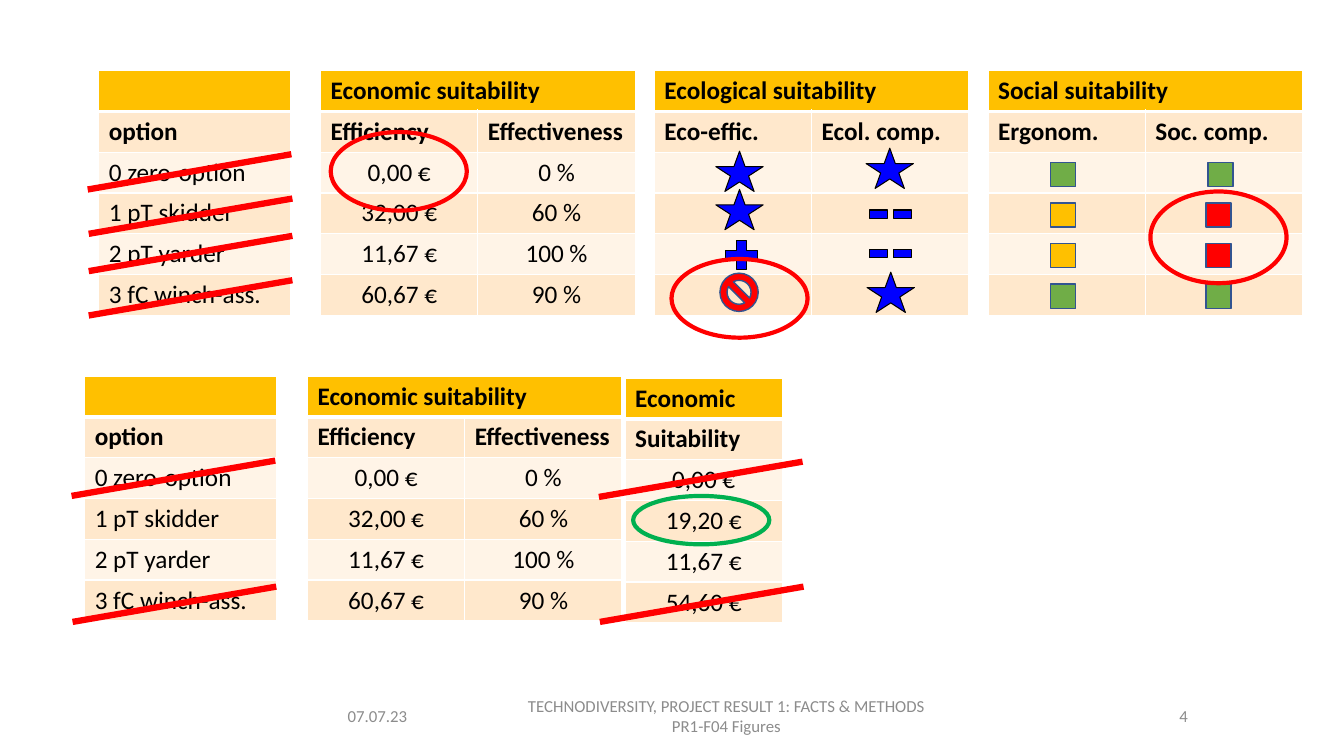
"""Builds the slide that compares harvesting options by economic, ecological and social suitability."""
from typing import Any, NamedTuple

from lxml import etree
from pptx import Presentation
from pptx import util as u
from pptx.dml.color import RGBColor
from pptx.enum import shapes, text
from pptx.oxml.ns import qn

ROW_HEIGHT = 0.405
SUIT_WIDTH = 1.56
AMBER, PEACH, CREAM = "FFC000", "FFE8CC", "FFF4E7"
RED, GREEN, BLUE = "FF0000", "70AD47", "0000FF"
BLACK, WHITE, NAVY, GREY = "000000", "FFFFFF", "325491", "8C8C8C"
Kind = shapes.MSO_SHAPE
Align = text.PP_ALIGN


class Panel(NamedTuple):
    left: float
    top: float
    column_width: float
    heading: str
    labels: list[str]
    body: list[list[str]]
    align: Any = Align.CENTER


class Rating(NamedTuple):
    kind: Any
    left: float
    top: float
    width: float
    height: float
    fill: str | None
    line: str
    weight: float


class Strike(NamedTuple):
    left: float
    bottom: float


def star(left: float, top: float) -> Rating:
    """Describe a top ecological rating."""
    return Rating(Kind.STAR_5_POINT, left, top, 0.47, 0.4, BLUE, BLACK, 0.75)


def minus(left: float, top: float) -> Rating:
    """Describe one dash of a double-minus rating."""
    return Rating(Kind.MATH_MINUS, left, top, 0.24, 0.35, BLUE, BLACK, 0.75)


def square(left: float, row: int, fill: str) -> Rating:
    """Describe a social rating square for an option row."""
    return Rating(Kind.RECTANGLE, left, 1.61 + 0.403 * row, 0.25, 0.24, fill, NAVY, 1)


def ring(left: float, top: float, height: float, line: str = RED) -> Rating:
    """Describe an open ellipse around decisive values."""
    return Rating(Kind.OVAL, left, top, 1.35, height, None, line, 3)


OPTIONS = [["0 zero-option"], ["1 pT skidder"], ["2 pT yarder"], ["3 fC winch-ass."]]
ECONOMY = [["0,00 €", "0 %"], ["32,00 €", "60 %"], ["11,67 €", "100 %"], ["60,67 €", "90 %"]]
COSTS = [["0,00 €"], ["19,20 €"], ["11,67 €"], ["54,60 €"]]
UNRATED = [["", ""]] * 4
ECONOMY_LABELS = ["Efficiency", "Effectiveness"]

PANELS = [
    Panel(0.98, 0.7, 1.9, "", ["option"], OPTIONS, Align.LEFT),
    Panel(3.18, 0.7, SUIT_WIDTH, "Economic suitability", ECONOMY_LABELS, ECONOMY),
    Panel(6.49, 0.7, SUIT_WIDTH, "Ecological suitability", ["Eco-effic.", "Ecol. comp."], UNRATED),
    Panel(9.8, 0.7, SUIT_WIDTH, "Social suitability", ["Ergonom.", "Soc. comp."], UNRATED),
    Panel(0.84, 3.73, 1.9, "", ["option"], OPTIONS, Align.LEFT),
    Panel(3.05, 3.73, SUIT_WIDTH, "Economic suitability", ECONOMY_LABELS, ECONOMY),
    Panel(6.2, 3.75, SUIT_WIDTH, "Economic", ["Suitability"], COSTS),
]
RATINGS = [
    *(square(10.42, row, fill) for row, fill in enumerate([GREEN, AMBER, AMBER, GREEN])),
    square(11.98, 0, GREEN),
    *(square(11.96, row, fill) for row, fill in enumerate([RED, RED, GREEN], 1)),
    star(7.1, 1.5),
    Rating(Kind.MATH_PLUS, 7.14, 2.33, 0.43, 0.4, BLUE, BLACK, 0.75),
    star(7.1, 1.88),
    Rating(Kind.NO_SYMBOL, 7.14, 2.71, 0.38, 0.38, RED, NAVY, 1),
    star(8.59, 1.47),
    star(8.6, 2.7),
    *(minus(left, top) for top in (1.95, 2.34) for left in (8.83, 8.59)),
    ring(3.28, 1.31, 0.78),
    ring(6.66, 2.57, 0.78),
    ring(11.41, 1.9, 0.91),
    ring(6.28, 4.92, 0.48, "00B050"),
]
STRIKES = [
    Strike(0.87, 1.88), Strike(0.88, 2.32), Strike(0.88, 2.69), Strike(0.88, 3.13),
    Strike(0.71, 4.92), Strike(0.72, 6.17), Strike(5.94, 4.93), Strike(5.95, 6.17),
]


def rgb(value: str) -> RGBColor:
    """Turn a hex string into a colour."""
    return RGBColor.from_string(value)


def write(frame: Any, wording: str, *, size: float = 18, color: str = BLACK,
          bold: bool = False, align: Any = Align.LEFT) -> None:
    """Fill a text frame, one paragraph per line of wording."""
    for index, line in enumerate(wording.split("\n")):
        paragraph = frame.paragraphs[0] if index == 0 else frame.add_paragraph()
        paragraph.alignment = align
        run = paragraph.add_run()
        run.text = line
        run.font.name = "Calibri"
        run.font.size = u.Pt(size)
        run.font.bold = bold
        run.font.color.rgb = rgb(color)


def border(cell: Any, row: int) -> None:
    """Give a cell white borders, with a thick rule under the heading row."""
    properties = cell._tc.get_or_add_tcPr()
    for side in "LRTB":
        thick = (row, side) in ((0, "B"), (1, "T"))
        edge = etree.SubElement(properties, qn(f"a:ln{side}"), w=str(u.Pt(3 if thick else 1)))
        fill = etree.SubElement(edge, qn("a:solidFill"))
        etree.SubElement(fill, qn("a:srgbClr"), val=WHITE)


def draw_panel(slide: Any, panel: Panel) -> None:
    """Draw one table of the comparison."""
    columns = len(panel.labels)
    rows = [[panel.heading] + [""] * (columns - 1), panel.labels, *panel.body]
    table = slide.shapes.add_table(
        len(rows), columns, u.Inches(panel.left), u.Inches(panel.top),
        u.Inches(panel.column_width * columns), u.Inches(ROW_HEIGHT * len(rows))).table
    for column in table.columns:
        column.width = u.Inches(panel.column_width)
    for r, row in enumerate(rows):
        table.rows[r].height = u.Inches(ROW_HEIGHT)
        for c, wording in enumerate(row):
            cell = table.cell(r, c)
            border(cell, r)
            cell.fill.solid()
            cell.fill.fore_color.rgb = rgb(AMBER if r == 0 else PEACH if r % 2 else CREAM)
            if wording:
                write(cell.text_frame, wording, bold=r < 2,
                      align=Align.LEFT if r < 2 else panel.align)
    if columns > 1:
        table.cell(0, 0).merge(table.cell(0, columns - 1))


def draw_rating(slide: Any, rating: Rating) -> None:
    """Draw a rating symbol or an open ellipse."""
    shape = slide.shapes.add_shape(
        rating.kind, u.Inches(rating.left), u.Inches(rating.top),
        u.Inches(rating.width), u.Inches(rating.height))
    shape.shadow.inherit = False
    if rating.fill:
        shape.fill.solid()
        shape.fill.fore_color.rgb = rgb(rating.fill)
    else:
        shape.fill.background()
    shape.line.color.rgb = rgb(rating.line)
    shape.line.width = u.Pt(rating.weight)


def draw_strike(slide: Any, strike: Strike) -> None:
    """Cross out a rejected option with a rising red line."""
    line = slide.shapes.add_connector(
        shapes.MSO_CONNECTOR.STRAIGHT, u.Inches(strike.left), u.Inches(strike.bottom),
        u.Inches(strike.left + 2.02), u.Inches(strike.bottom - 0.35))
    line.line.color.rgb = rgb(RED)
    line.line.width = u.Pt(4.5)
    etree.SubElement(line._element.spPr, qn("a:effectLst"))


def draw_footer(slide: Any, wording: str, left: float, width: float, align: Any) -> None:
    """Write one part of the footer line."""
    box = slide.shapes.add_textbox(u.Inches(left), u.Inches(6.9), u.Inches(width), u.Inches(0.4))
    box.text_frame.word_wrap = True
    box.text_frame.vertical_anchor = text.MSO_ANCHOR.MIDDLE
    write(box.text_frame, wording, size=12, color=GREY, align=align)


def main() -> None:
    """Build and save the slide."""
    deck = Presentation()
    deck.slide_width, deck.slide_height = u.Inches(13.33), u.Inches(7.5)
    slide = deck.slides.add_slide(deck.slide_layouts[6])
    draw_footer(slide, "07.07.23", 3.35, 1.34, Align.LEFT)
    draw_footer(slide, "TECHNODIVERSITY, PROJECT RESULT 1: FACTS & METHODS\nPR1-F04 Figures",
                4.86, 4.69, Align.CENTER)
    draw_footer(slide, "4", 9.77, 2.11, Align.RIGHT)
    for panel in PANELS:
        draw_panel(slide, panel)
    for rating in RATINGS:
        draw_rating(slide, rating)
    for strike in STRIKES:
        draw_strike(slide, strike)
    deck.save("out.pptx")


if __name__ == "__main__":
    main()
